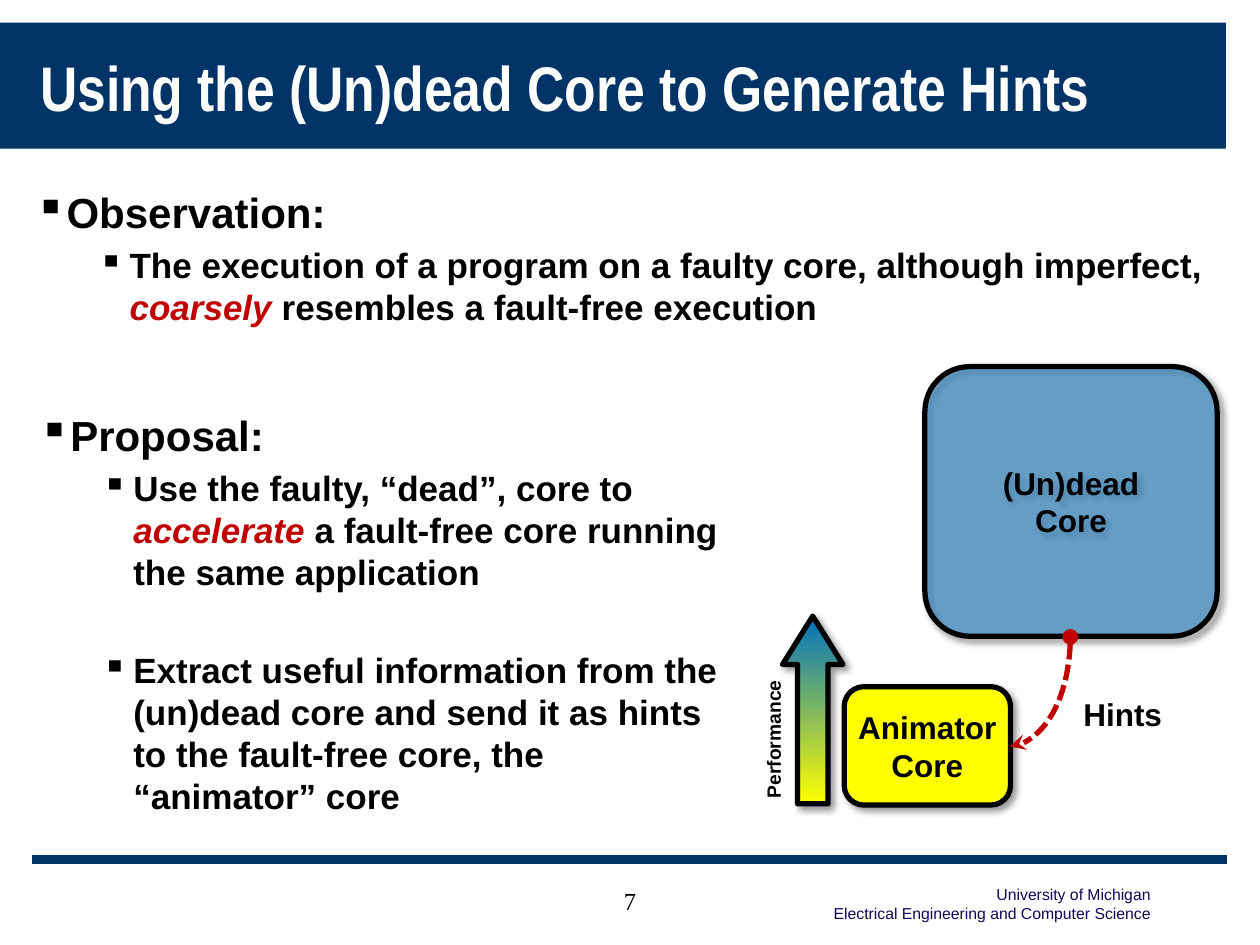
from lxml.etree import SubElement
from pptx import Presentation
from pptx.dml.color import RGBColor
from pptx.enum.dml import MSO_LINE
from pptx.enum.shapes import MSO_CONNECTOR, MSO_SHAPE
from pptx.enum.text import MSO_ANCHOR, MSO_AUTO_SIZE, PP_ALIGN
from pptx.oxml.ns import qn
from pptx.util import Inches, Pt

# Content: (text, style) runs; bullets are (level, space before, runs)
TITLE = "Using the (Un)dead Core to Generate Hints"
CREDIT = ["University of Michigan", "Electrical Engineering and Computer Science"]
PAGE = "7"
BULLETS = [
    ((0.18, 1.43, 9.48, 1.85), [
        (0, 0, [("Observation:", "")]),
        (1, 4, [("The execution of a program on a faulty core, although imperfect, ", ""),
                ("coarsely ", "key"),
                ("resembles a fault-free execution", "")]),
    ]),
    ((0.21, 3.2, 5.74, 3.31), [
        (0, 0, [("Proposal:", "")]),
        (1, 4, [("Use the faulty, “dead”, core to ", ""),
                ("accelerate ", "key"),
                ("a fault-free core running the same application", "")]),
        (1, 32, [("Extract useful information from the (un)dead core and send it "
                  "as hints to the fault-free core, the “animator” core", "")]),
    ]),
]

THEME = {
    "navy": "003366", "credit": "0F0958", "white": "FFFFFF", "black": "000000",
    "red": "C00000", "blue": "0070C0", "yellow": "FFFF00",
    "body": "Arial", "heading": "Arial Narrow", "number": "Times New Roman",
    "title_pt": 36, "level_pt": (24, 20), "label_pt": 18,
    "axis_pt": 11, "page_pt": 14, "credit_pt": 9, "line_pt": 3,
}
CORES = [
    (["(Un)dead", "Core"], (7.34, 2.91, 2.32, 2.14), "blue", 50),
    (["Animator", "Core"], (6.7, 5.45, 1.32, 0.94), "yellow", 100),
]


def color(name):
    return RGBColor.from_string(THEME[name])


def inches(values):
    return [Inches(v) for v in values]


def add_run(p, text, size="label_pt", font="body", ink="black", bold=True, italic=False):
    r = p.add_run()
    r.text = text
    r.font.name = THEME[font]
    r.font.size = Pt(THEME[size] if isinstance(size, str) else size)
    r.font.color.rgb = color(ink)
    r.font.bold, r.font.italic = bold, italic


def write(sp, lines, align=PP_ALIGN.LEFT, anchor=MSO_ANCHOR.TOP, wrap=True, **style):
    tf = sp.text_frame
    tf.word_wrap = wrap
    tf.vertical_anchor = anchor
    for i, text in enumerate(lines):
        p = tf.add_paragraph() if i else tf.paragraphs[0]
        p.alignment = align
        add_run(p, text, **style)
    return tf


def add_label(s, box, lines, **style):
    sp = s.shapes.add_textbox(*inches(box))
    write(sp, lines, **style)
    return sp


def add_bullets(s, box, items):
    tf = s.shapes.add_textbox(*inches(box)).text_frame
    tf.word_wrap = True
    for i, (level, before, runs) in enumerate(items):
        p = tf.add_paragraph() if i else tf.paragraphs[0]
        p.level = level
        p.space_before = Pt(before)
        pPr = p._p.get_or_add_pPr()
        pPr.set("marL", str(Inches(0.25 + 0.5 * level)))
        pPr.set("indent", str(Inches(-0.25)))
        SubElement(pPr, qn("a:buChar"), char="▪")
        for text, kind in runs:
            key = kind == "key"
            add_run(p, text, size=THEME["level_pt"][level],
                    ink="red" if key else "black", italic=key)


def outline(sp, name="black"):
    sp.line.color.rgb = color(name)
    sp.line.width = Pt(THEME["line_pt"])


def add_shadow(sp):
    effects = SubElement(sp._element.spPr, qn("a:effectLst"))
    shadow = SubElement(effects, qn("a:outerShdw"), blurRad=str(Pt(4)), dist=str(Pt(3)),
                        dir="2700000", algn="tl", rotWithShape="0")
    ink = SubElement(shadow, qn("a:srgbClr"), val=THEME["black"])
    SubElement(ink, qn("a:alpha"), val="40000")


def add_core(s, lines, box, fill, opacity):
    sp = s.shapes.add_shape(MSO_SHAPE.ROUNDED_RECTANGLE, *inches(box))
    sp.fill.solid()
    sp.fill.fore_color.rgb = color(fill)
    if opacity < 100:
        ink = sp._element.spPr.find(".//" + qn("a:srgbClr"))
        SubElement(ink, qn("a:alpha"), val=str(opacity * 1000))
    outline(sp)
    add_shadow(sp)
    write(sp, lines, align=PP_ALIGN.CENTER, anchor=MSO_ANCHOR.MIDDLE, wrap=False)


def add_hint_arrow(s):
    # Quarter curve, turned to run down from the upper core into the lower one
    line = s.shapes.add_connector(MSO_CONNECTOR.CURVE, *inches((7.82, 5.25, 8.69, 5.73)))
    outline(line, "red")
    line.line.dash_style = MSO_LINE.SQUARE_DOT
    spPr = line._element.spPr
    spPr.find(qn("a:xfrm")).set("rot", "5400000")
    spPr.find(qn("a:prstGeom")).set("prst", "curvedConnector2")
    ln = spPr.find(qn("a:ln"))
    SubElement(ln, qn("a:headEnd"), type="oval")
    SubElement(ln, qn("a:tailEnd"), type="stealth")
    SubElement(spPr, qn("a:effectLst"))


def add_performance_arrow(s):
    sp = s.shapes.add_shape(MSO_SHAPE.DOWN_ARROW, *inches((6.21, 4.89, 0.48, 1.49)))
    sp.rotation = 180
    sp.adjustments[0], sp.adjustments[1] = 0.5, 0.8
    sp.fill.gradient()
    sp.fill.gradient_angle = 270
    for stop, name in zip(sp.fill.gradient_stops, ("yellow", "blue")):
        stop.color.rgb = color(name)
    outline(sp)
    add_shadow(sp)


def main():
    prs = Presentation()
    prs.slide_width, prs.slide_height = Inches(10), Inches(7.5)
    s = prs.slides.add_slide(prs.slide_layouts[6])

    # Title band, footer rule and credit
    band = s.shapes.add_shape(MSO_SHAPE.RECTANGLE, *inches((-0.01, 0.18, 9.74, 1)))
    band.shadow.inherit = False
    band.fill.solid()
    band.fill.fore_color.rgb = color("navy")
    band.line.fill.background()
    credit = add_label(s, (6.51, 6.97, 2.72, 0.4), CREDIT, align=PP_ALIGN.RIGHT, wrap=False,
                       size="credit_pt", ink="credit", bold=False)
    credit.text_frame.auto_size = MSO_AUTO_SIZE.SHAPE_TO_FIT_TEXT
    rule = s.shapes.add_connector(MSO_CONNECTOR.STRAIGHT, *inches((0.25, 6.82, 9.74, 6.82)))
    rule.line.color.rgb = color("navy")
    rule.line.width = Pt(5)
    SubElement(rule._element.spPr, qn("a:effectLst"))

    # Title, page number and bullets
    add_label(s, (0.22, 0.2, 9.04, 0.97), [TITLE], anchor=MSO_ANCHOR.MIDDLE,
              size="title_pt", font="heading", ink="white")
    add_label(s, (3.96, 6.98, 2.08, 0.5), [PAGE], align=PP_ALIGN.CENTER,
              size="page_pt", font="number", bold=False)
    for box, items in BULLETS:
        add_bullets(s, box, items)

    # Core diagram
    for core in CORES:
        add_core(s, *core)
    add_hint_arrow(s)
    add_label(s, (8.5, 5.47, 0.86, 0.41), ["Hints"])
    add_performance_arrow(s)
    axis = add_label(s, (5.48, 5.63, 1.32, 0.29), ["Performance"], size="axis_pt")
    axis.rotation = 270

    prs.save("out.pptx")


if __name__ == "__main__":
    main()
